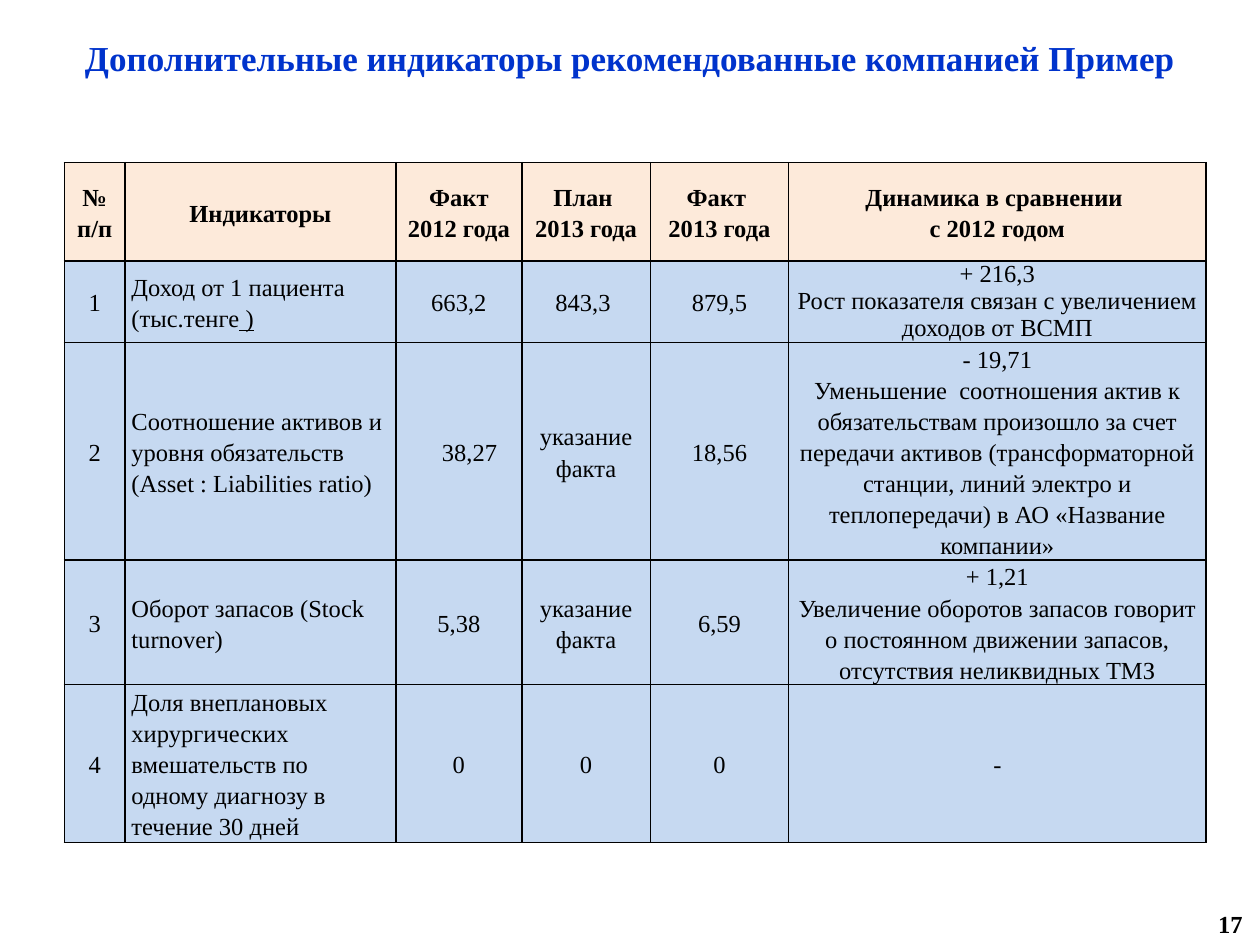
from lxml.etree import SubElement
from pptx import Presentation
from pptx.dml.color import RGBColor
from pptx.enum.text import MSO_ANCHOR, MSO_AUTO_SIZE, PP_ALIGN
from pptx.oxml.ns import qn
from pptx.util import Cm, Pt


def color(value):
    return RGBColor.from_string(value)


def format_paragraph(paragraph, size, shade, bold, align):
    paragraph.alignment = align
    paragraph.font.name = "Times New Roman"
    paragraph.font.size = Pt(size)
    paragraph.font.bold = bold
    paragraph.font.color.rgb = color(shade)


deck = Presentation()
deck.slide_width, deck.slide_height = Cm(25.4), Cm(19.05)
page = deck.slides.add_slide(deck.slide_layouts[5])

title = page.shapes.title
title.left, title.top, title.width, title.height = Cm(0), Cm(0.61), Cm(25.4), Cm(1.12)
title.text_frame.text = "Дополнительные индикаторы рекомендованные компанией Пример"
title.text_frame.vertical_anchor = MSO_ANCHOR.TOP
title.text_frame.auto_size = MSO_AUTO_SIZE.NONE
format_paragraph(title.text_frame.paragraphs[0], 20, "0033CC", True, PP_ALIGN.CENTER)

rows = [
    ["№ п/п", "Индикаторы", "Факт 2012 года", "План \n2013 года", "Факт \n2013 года",
     "Динамика в сравнении \nс 2012 годом"],
    ["1", "Доход от 1 пациента (тыс.тенге", "663,2", "843,3 ", "879,5",
     "+ 216,3\nРост показателя связан с увеличением доходов от ВСМП"],
    ["2", "Соотношение активов и уровня обязательств (Asset : Liabilities ratio)",
     "38,27", "указание факта", "18,56",
     "- 19,71\nУменьшение  соотношения актив к обязательствам произошло за счет передачи "
     "активов (трансформаторной станции, линий электро и теплопередачи) в АО "
     "«Название компании»"],
    ["3", "Оборот запасов (Stock turnover)", "5,38", "указание факта", "6,59",
     "+ 1,21\nУвеличение оборотов запасов говорит о постоянном движении запасов, "
     "отсутствия неликвидных ТМЗ"],
    ["4", "Доля внеплановых хирургических вмешательств по одному диагнозу в течение 30 дней",
     "0", "0", "0", "-"],
]
widths = [1.22, 5.46, 2.54, 2.59, 2.79, 8.41]
heights = [1.98, 1.64, 4.39, 2.5, 3.18]

table = page.shapes.add_table(
    len(rows), len(widths), Cm(1.3), Cm(3.28), Cm(sum(widths)), Cm(sum(heights))
).table
for column, width in zip(table.columns, widths):
    column.width = Cm(width)
for row, height in zip(table.rows, heights):
    row.height = Cm(height)

for row_index, texts in enumerate(rows):
    for column_index, text in enumerate(texts):
        cell = table.cell(row_index, column_index)
        header = row_index == 0
        cell.text = text
        cell.vertical_anchor = MSO_ANCHOR.MIDDLE
        cell.margin_left = cell.margin_right = Cm(0.18 if column_index == 2 and not header else 0.13)
        cell.margin_top = cell.margin_bottom = Cm(0)
        properties = cell._tc.get_or_add_tcPr()
        for side in ("a:lnL", "a:lnR", "a:lnT", "a:lnB"):
            line = SubElement(properties, qn(side), w=str(Pt(1)))
            fill = SubElement(line, qn("a:solidFill"))
            SubElement(fill, qn("a:srgbClr"), val="000000")
        cell.fill.solid()
        cell.fill.fore_color.rgb = color("FDEADA" if header else "C6D9F1")
        align = PP_ALIGN.LEFT if column_index == 1 and not header else PP_ALIGN.CENTER
        for paragraph in cell.text_frame.paragraphs:
            format_paragraph(paragraph, 14, "000000", header, align)
            if (row_index, column_index) != (1, 5):
                paragraph.line_spacing = 1.15

span = table.cell(1, 1).text_frame.paragraphs[0].add_run()
span.text = " )"
span.font.underline = True
indented = table.cell(2, 2).text_frame.paragraphs[0]
indented._p.get_or_add_pPr().set("indent", str(Cm(0.43)))

number = page.shapes.add_textbox(Cm(19.38), Cm(18.11), Cm(5.92), Cm(1.02))
number.text_frame.word_wrap = True
number.text_frame.vertical_anchor = MSO_ANCHOR.MIDDLE
number.text_frame.text = "17"
format_paragraph(number.text_frame.paragraphs[0], 14, "000000", True, PP_ALIGN.RIGHT)

deck.save("out.pptx")
